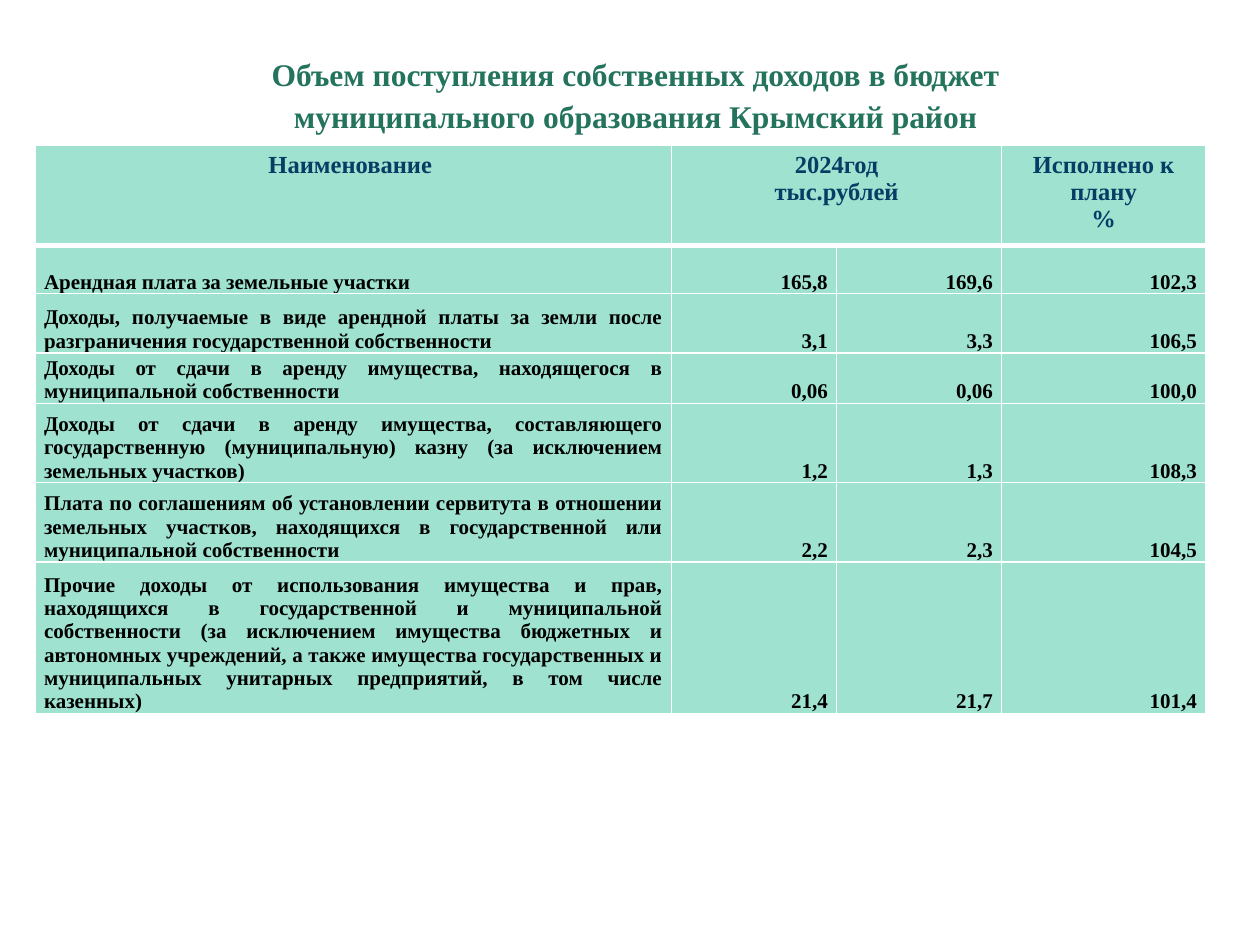
import pptx
import pptx.dml.color
import pptx.enum.text
import pptx.oxml
import pptx.oxml.ns
import pptx.util

COLORS = {"title": "23735D", "heading": "073C65", "body": "000000",
          "cell": "9EE2CF", "border": "FFFFFF"}
FONT = "Times New Roman"
ALIGN = pptx.enum.text.PP_ALIGN
ANCHOR = pptx.enum.text.MSO_ANCHOR
Inches = pptx.util.Inches

TITLE = ("Объем поступления собственных доходов в бюджет "
         "муниципального образования Крымский район")
COLUMN_WIDTHS = [5.05, 1.31, 1.31, 1.62]
ROW_HEIGHTS = [0.79, 0.38, 0.47, 0.4, 0.63, 0.63, 1.2]
# Heading paragraphs by the column in which they start
HEADINGS = {0: ["Наименование "],
            1: ["2024год", "тыс.рублей"],
            3: ["Исполнено к плану", "%"]}
INCOME_ROWS = [
    ("Арендная плата за земельные участки", "165,8", "169,6", "102,3"),
    ("Доходы, получаемые в виде арендной платы за земли после "
     "разграничения государственной собственности ", "3,1", "3,3", "106,5"),
    ("Доходы от сдачи в аренду имущества, находящегося в муниципальной "
     "собственности", "0,06", "0,06", "100,0"),
    ("Доходы от сдачи в аренду имущества, составляющего государственную "
     "(муниципальную) казну (за исключением земельных участков)",
     "1,2", "1,3", "108,3"),
    ("Плата по соглашениям об установлении сервитута в отношении земельных "
     "участков, находящихся в государственной или муниципальной "
     "собственности", "2,2", "2,3", "104,5"),
    ("Прочие доходы от использования имущества и прав, находящихся в "
     "государственной и муниципальной собственности (за исключением "
     "имущества бюджетных и автономных учреждений, а также имущества "
     "государственных и муниципальных унитарных предприятий, в том числе "
     "казенных)", "21,4", "21,7", "101,4"),
]


def rgb(name):
    return pptx.dml.color.RGBColor.from_string(COLORS[name])


def write_paragraphs(text_frame, lines, size, color, alignment):
    for index, line in enumerate(lines):
        paragraph = text_frame.paragraphs[0] if index == 0 else text_frame.add_paragraph()
        paragraph.alignment = alignment
        run = paragraph.add_run()
        run.text = line
        run.font.name = FONT
        run.font.size = pptx.util.Pt(size)
        run.font.bold = True
        run.font.color.rgb = rgb(color)


def add_title(slide):
    box = slide.shapes.add_textbox(Inches(1.54), Inches(0.36), Inches(7.01), Inches(1.01))
    box.text_frame.word_wrap = True
    write_paragraphs(box.text_frame, [TITLE], 18, "title", ALIGN.CENTER)
    box.text_frame.paragraphs[0].line_spacing = 1.1


def set_borders(cell, top=1, bottom=1):
    """Draw the four cell borders; widths are in points."""
    properties = cell._tc.get_or_add_tcPr()
    widths = {"lnL": 1, "lnR": 1, "lnT": top, "lnB": bottom}
    for position, (tag, width) in enumerate(widths.items()):
        line = pptx.oxml.parse_xml(
            f'<a:{tag} {pptx.oxml.ns.nsdecls("a")} w="{pptx.util.Pt(width)}">'
            f'<a:solidFill><a:srgbClr val="{COLORS["border"]}"/></a:solidFill></a:{tag}>')
        properties.insert(position, line)


def fill_heading_row(table):
    table.cell(0, 1).merge(table.cell(0, 2))
    for column, lines in HEADINGS.items():
        write_paragraphs(table.cell(0, column).text_frame, lines, 14, "heading", ALIGN.CENTER)


def fill_income_rows(table):
    for row, values in enumerate(INCOME_ROWS, start=1):
        for column, value in enumerate(values):
            cell = table.cell(row, column)
            cell.vertical_anchor = ANCHOR.BOTTOM
            cell.margin_left = cell.margin_right = Inches(0.07)
            cell.margin_top = cell.margin_bottom = 0
            alignment = ALIGN.RIGHT if column else ALIGN.JUSTIFY
            write_paragraphs(cell.text_frame, [value], 12, "body", alignment)


def add_income_table(slide):
    frame = slide.shapes.add_table(
        len(ROW_HEIGHTS), len(COLUMN_WIDTHS), Inches(0.28), Inches(1.15),
        Inches(sum(COLUMN_WIDTHS)), Inches(sum(ROW_HEIGHTS)))
    table = frame.table
    for column, width in zip(table.columns, COLUMN_WIDTHS):
        column.width = Inches(width)
    for index, (row, height) in enumerate(zip(table.rows, ROW_HEIGHTS)):
        row.height = Inches(height)
        for cell in row.cells:
            cell.fill.solid()
            cell.fill.fore_color.rgb = rgb("cell")
            set_borders(cell, top=3 if index == 1 else 1, bottom=3 if index == 0 else 1)
    fill_heading_row(table)
    fill_income_rows(table)


def main():
    presentation = pptx.Presentation()
    presentation.slide_width = Inches(10)
    presentation.slide_height = Inches(7.5)
    slide = presentation.slides.add_slide(presentation.slide_layouts[6])
    add_title(slide)
    add_income_table(slide)
    presentation.save("out.pptx")


if __name__ == "__main__":
    main()
